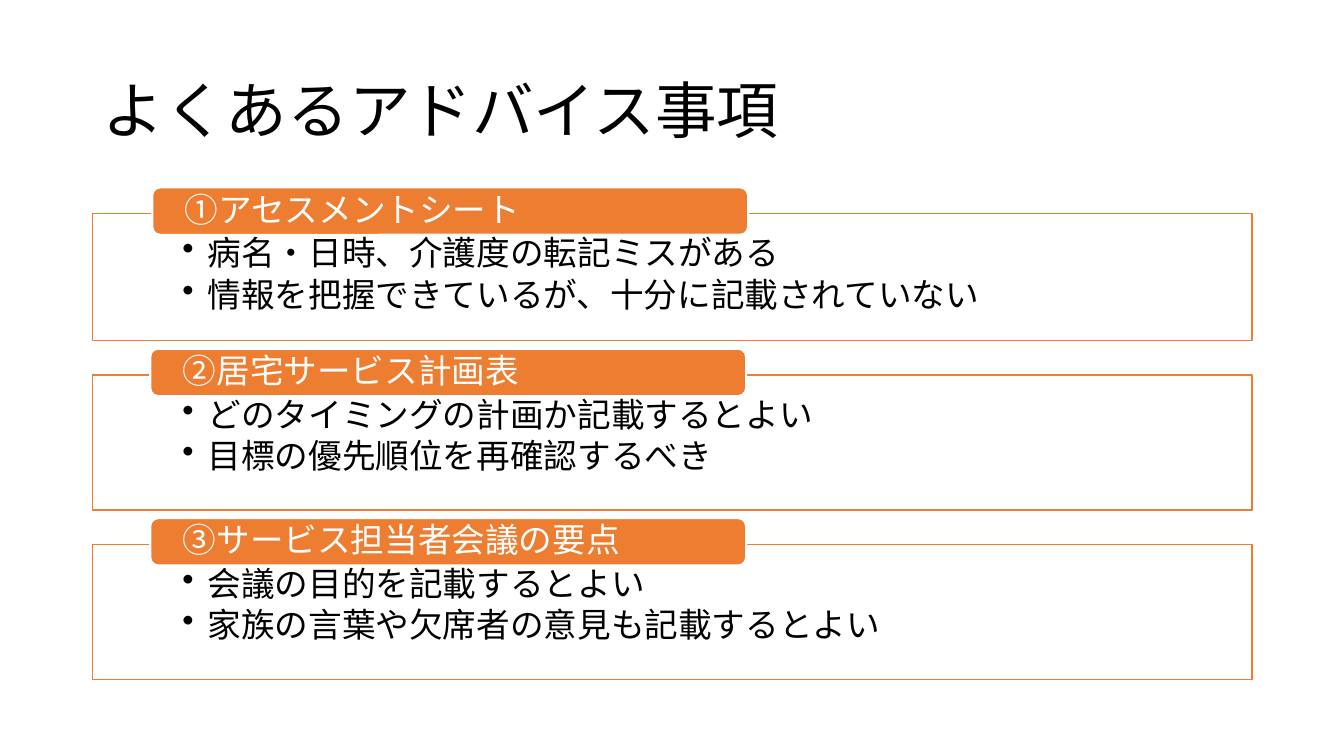
from lxml.etree import SubElement
from pptx import Presentation
from pptx.dml.color import RGBColor
from pptx.enum.shapes import MSO_SHAPE
from pptx.enum.text import MSO_ANCHOR, PP_ALIGN
from pptx.oxml.ns import qn
from pptx.util import Inches, Pt

FONT = "Noto Sans CJK JP"
BLACK = RGBColor(0x00, 0x00, 0x00)
WHITE = RGBColor(0xFF, 0xFF, 0xFF)
ORANGE = RGBColor(0xED, 0x7D, 0x31)

LEFT, WIDTH = 0.92, 11.5
TAB_WIDTH, TAB_HEIGHT, TAB_RISE = 5.91, 0.47, 0.26

SECTIONS = [
    (2.12, 1.26, 0.59, "①アセスメントシート",
     ["病名・日時、介護度の転記ミスがある",
      "情報を把握できているが、十分に記載されていない"]),
    (3.72, 1.34, 0.57, "②居宅サービス計画表",
     ["どのタイミングの計画か記載するとよい",
      "目標の優先順位を再確認するべき"]),
    (5.4, 1.34, 0.57, "③サービス担当者会議の要点",
     ["会議の目的を記載するとよい",
      "家族の言葉や欠席者の意見も記載するとよい"]),
]


def format_paragraph(paragraph, size, color, space_after=0):
    paragraph.alignment = PP_ALIGN.LEFT
    paragraph.line_spacing = 0.9
    paragraph.space_after = Pt(space_after)
    for run in paragraph.runs:
        run.font.size = Pt(size)
        run.font.name = FONT
        run.font.color.rgb = color
        east_asian = SubElement(run._r.get_or_add_rPr(), qn("a:ea"))
        east_asian.set("typeface", FONT)


def add_bullet(paragraph):
    properties = paragraph._p.get_or_add_pPr()
    properties.set("marL", str(Inches(0.25)))
    properties.set("indent", str(-Inches(0.25)))
    SubElement(properties, qn("a:buChar")).set("char", "•")


def set_text_area(text_frame, anchor, side, top, bottom):
    text_frame.word_wrap = True
    text_frame.vertical_anchor = anchor
    text_frame.margin_left = text_frame.margin_right = Inches(side)
    text_frame.margin_top = Inches(top)
    text_frame.margin_bottom = Inches(bottom)


def add_box(slide, preset, left, top, width, height, fill, line, line_width):
    shape = slide.shapes.add_shape(
        preset, Inches(left), Inches(top), Inches(width), Inches(height))
    shape.shadow.inherit = False
    shape.fill.solid()
    shape.fill.fore_color.rgb = fill
    shape.line.color.rgb = line
    shape.line.width = Pt(line_width)
    return shape


def add_title(slide, left, top, width, height):
    title = slide.shapes.add_textbox(
        Inches(left), Inches(top), Inches(width), Inches(height))
    set_text_area(title.text_frame, MSO_ANCHOR.MIDDLE, 0.1, 0.05, 0.05)
    title.text_frame.text = "よくあるアドバイス事項"
    format_paragraph(title.text_frame.paragraphs[0], 44, BLACK)


def add_section(slide, left, top, width, height, tab_offset, heading, points):
    frame = add_box(slide, MSO_SHAPE.RECTANGLE, left, top, width, height,
                    WHITE, ORANGE, 1)
    set_text_area(frame.text_frame, MSO_ANCHOR.TOP, 0.89, 0.23, 0.19)
    frame.text_frame.text = "\n".join(points)
    for paragraph in frame.text_frame.paragraphs:
        format_paragraph(paragraph, 24, BLACK, 3.6)
        add_bullet(paragraph)

    tab = add_box(slide, MSO_SHAPE.ROUNDED_RECTANGLE, left + tab_offset,
                  top - TAB_RISE, TAB_WIDTH, TAB_HEIGHT, ORANGE, WHITE, 1.5)
    set_text_area(tab.text_frame, MSO_ANCHOR.MIDDLE, 0.3, 0, 0)
    tab.text_frame.text = heading
    format_paragraph(tab.text_frame.paragraphs[0], 24, WHITE, 8.4)


def main():
    presentation = Presentation()
    presentation.slide_width = Inches(13.33)
    presentation.slide_height = Inches(7.5)
    slide = presentation.slides.add_slide(presentation.slide_layouts[6])
    add_title(slide, LEFT, 0.4, WIDTH, 1.45)
    for top, height, tab_offset, heading, points in SECTIONS:
        add_section(slide, LEFT, top, WIDTH, height, tab_offset, heading, points)
    presentation.save("out.pptx")


if __name__ == "__main__":
    main()
